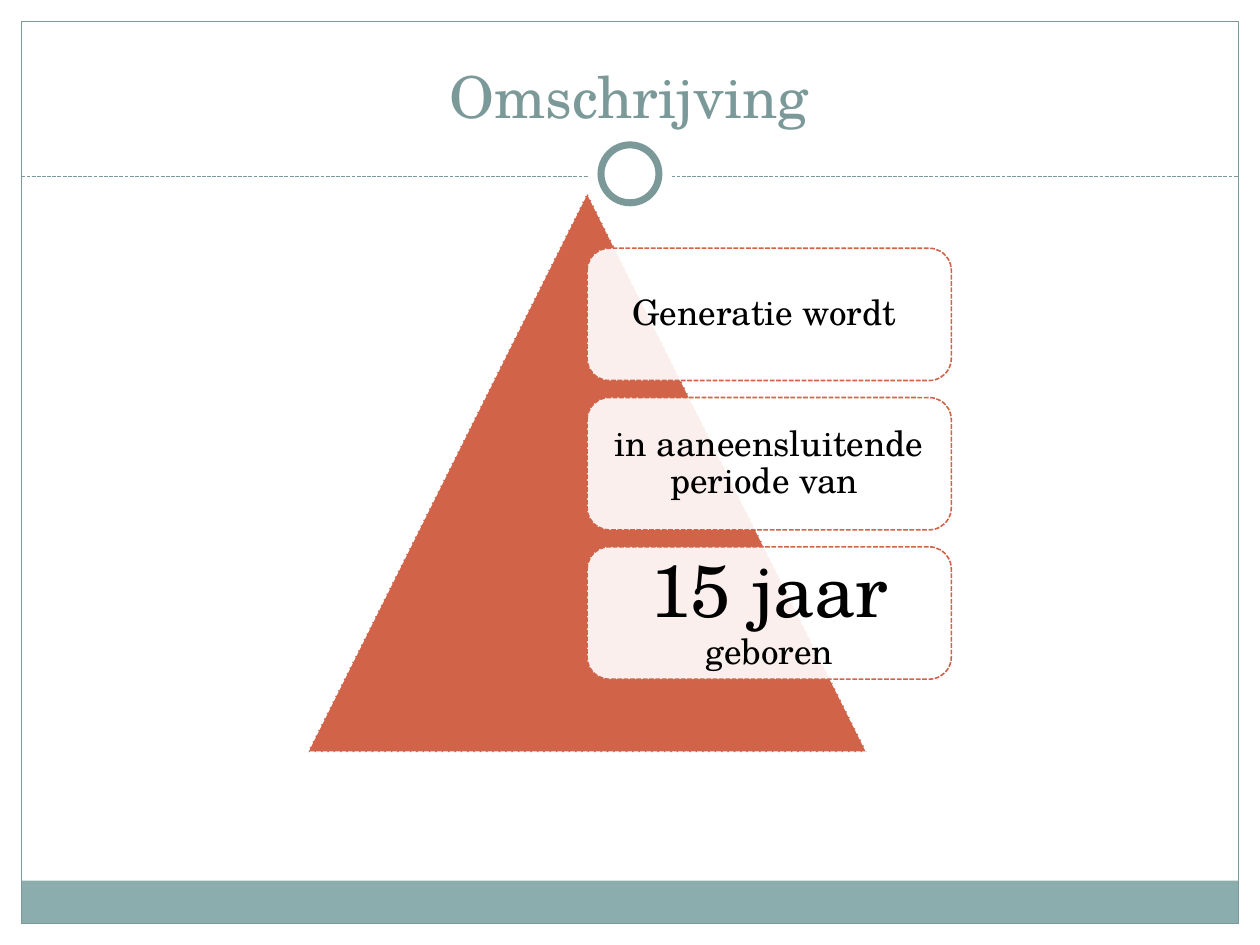
from pptx import Presentation
from pptx.dml.color import RGBColor
from pptx.enum.dml import MSO_LINE
from pptx.enum.shapes import MSO_CONNECTOR, MSO_SHAPE
from pptx.enum.text import MSO_ANCHOR, MSO_AUTO_SIZE, PP_ALIGN
from pptx.oxml.ns import qn
from pptx.util import Inches, Pt
from lxml import etree

RECT, OVAL = MSO_SHAPE.RECTANGLE, MSO_SHAPE.OVAL
TRIANGLE, ROUNDED = MSO_SHAPE.ISOSCELES_TRIANGLE, MSO_SHAPE.ROUNDED_RECTANGLE
STRAIGHT, DASH = MSO_CONNECTOR.STRAIGHT, MSO_LINE.SQUARE_DOT
CENTER, MIDDLE, BOTTOM = PP_ALIGN.CENTER, MSO_ANCHOR.MIDDLE, MSO_ANCHOR.BOTTOM
NO_AUTOFIT = MSO_AUTO_SIZE.NONE

WHITE = RGBColor(0xFF, 0xFF, 0xFF)
BLACK = RGBColor(0x00, 0x00, 0x00)
TEAL = RGBColor(0x7C, 0x99, 0x9A)
PALE_TEAL = RGBColor(0x8C, 0xAD, 0xAE)
RUST = RGBColor(0xD1, 0x63, 0x49)
FONT = "TeX Gyre Schola"

WIDTH, HEIGHT = 10, 7.5
MARGIN = 0.17
RULE_TOP = 1.4
RING_MIDDLE = 1.38
TRIANGLE_LEFT, TRIANGLE_TOP, TRIANGLE_SIZE = 2.44, 1.53, 4.44
CARD_LEFT, CARD_TOP = TRIANGLE_LEFT + TRIANGLE_SIZE / 2, 1.97
CARD_WIDTH, CARD_HEIGHT, CARD_STEP = 2.89, 1.05, 1.185

# Each card: side inset and its (text, size) runs
CARDS = [
    (0.03, [("Generatie wordt ", 20)]),
    (0.03, [("in aaneensluitende periode van ", 20)]),
    (0.12, [("15 jaar ", 42), ("geboren", 20)]),
]


def apply(target, values):
    for name, value in values.items():
        setattr(target, name, value)


def style_line(line, color, width, dash=None):
    line.color.rgb = color
    line.width = Pt(width)
    if dash is not None:
        line.dash_style = dash


def add_figure(slide, preset, box, fill=None, line=None):
    figure = slide.shapes.add_shape(preset, *map(Inches, box))
    figure.shadow.inherit = False
    if fill is None:
        figure.fill.background()
    else:
        figure.fill.solid()
        figure.fill.fore_color.rgb = fill
    if line is None:
        figure.line.fill.background()
    else:
        style_line(figure.line, *line)
    return figure


def add_disc(slide, diameter, line=None):
    box = (WIDTH / 2 - diameter / 2, RING_MIDDLE - diameter / 2, diameter, diameter)
    return add_figure(slide, OVAL, box, WHITE, line)


def write_runs(frame, runs, color, anchor, inset):
    sides = ("margin_left", "margin_top", "margin_right", "margin_bottom")
    apply(frame, dict.fromkeys(sides, Inches(inset)))
    apply(frame, {"word_wrap": True, "auto_size": NO_AUTOFIT, "vertical_anchor": anchor})
    paragraph = frame.paragraphs[0]
    paragraph.alignment = CENTER
    for text, size in runs:
        run = paragraph.add_run()
        run.text = text
        apply(run.font, {"name": FONT, "size": Pt(size)})
        run.font.color.rgb = color
    return paragraph


def add_title(slide, text):
    title = slide.shapes.title
    apply(title, {"left": Inches(0.33), "top": Inches(0.25),
                  "width": Inches(9.33), "height": Inches(0.83)})
    write_runs(title.text_frame, [(text, 33)], TEAL, BOTTOM, 0.05)


def add_frame(slide):
    inner_width = WIDTH - 2 * MARGIN
    # Footer band and page border
    add_figure(slide, RECT, (MARGIN, 6.99, inner_width, 0.34), PALE_TEAL)
    add_figure(slide, RECT, (MARGIN, MARGIN, inner_width, HEIGHT - 2 * MARGIN),
               line=(TEAL, 0.75))
    # Dashed rule under the title
    rule = slide.shapes.add_connector(
        STRAIGHT, Inches(MARGIN), Inches(RULE_TOP), Inches(WIDTH - MARGIN), Inches(RULE_TOP))
    style_line(rule.line, TEAL, 0.75, DASH)
    etree.SubElement(rule._element.spPr, qn("a:effectLst"))
    # Ring that interrupts the rule
    add_disc(slide, 0.67)
    add_disc(slide, 0.46, (TEAL, 4))


def add_card(slide, row, inset, runs):
    box = (CARD_LEFT, CARD_TOP + row * CARD_STEP, CARD_WIDTH, CARD_HEIGHT)
    card = add_figure(slide, ROUNDED, box, WHITE, (RUST, 0.9, DASH))
    fill_color = card._element.spPr.find(qn("a:solidFill"))[0]
    etree.SubElement(fill_color, qn("a:alpha"), val="90000")
    paragraph = write_runs(card.text_frame, runs, BLACK, MIDDLE, inset)
    paragraph.line_spacing = 0.9


def main():
    deck = Presentation()
    apply(deck, {"slide_width": Inches(WIDTH), "slide_height": Inches(HEIGHT)})
    slide = deck.slides.add_slide(deck.slide_layouts[5])

    add_frame(slide)
    add_title(slide, "Omschrijving")

    # Pyramid with its three cards
    add_figure(slide, TRIANGLE, (TRIANGLE_LEFT, TRIANGLE_TOP, TRIANGLE_SIZE, TRIANGLE_SIZE),
               RUST, (WHITE, 0.9, DASH))
    for row, (inset, runs) in enumerate(CARDS):
        add_card(slide, row, inset, runs)

    deck.save("out.pptx")


if __name__ == "__main__":
    main()
